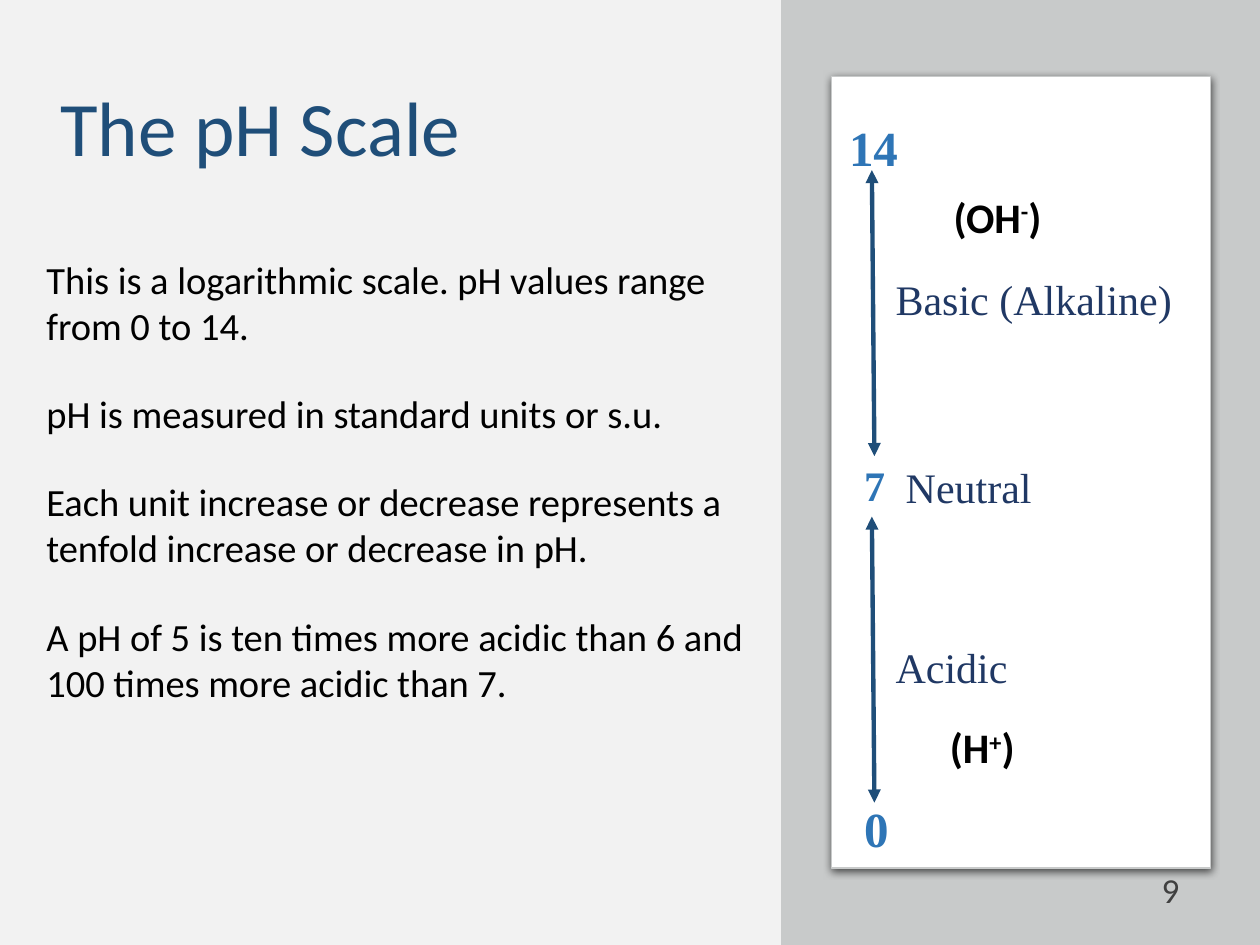
import pptx
import pptx.dml.color
import pptx.enum.shapes
import pptx.enum.text
import pptx.oxml
import pptx.oxml.ns
import pptx.util

SHAPE = pptx.enum.shapes.MSO_SHAPE
ANCHOR = pptx.enum.text.MSO_ANCHOR
ALIGN = pptx.enum.text.PP_ALIGN
NAMESPACE = pptx.oxml.ns.nsdecls("a")

deck = pptx.Presentation()
deck.slide_width = pptx.util.Inches(10)
deck.slide_height = pptx.util.Inches(7.5)
column = deck.slide_width // 100
row = deck.slide_height // 75


def colour(code):
    return pptx.dml.color.RGBColor.from_string(code)


def write(box, text, place, size=24, font="Calibri", ink="000000", bold=False,
          raised="", anchor=ANCHOR.TOP, align=ALIGN.LEFT, gap=0, spacing=1.0):
    """Put text in box at place (columns and rows); the part in raised is superscript."""
    left, top, width, height = place
    box.left, box.top = int(left * column), int(top * row)
    box.width, box.height = int(width * column), int(height * row)
    frame = box.text_frame
    frame.word_wrap = True
    frame.auto_size = pptx.enum.text.MSO_AUTO_SIZE.NONE
    frame.vertical_anchor = anchor
    for number, line in enumerate(text.split("\n")):
        para = frame.add_paragraph() if number else frame.paragraphs[0]
        para.alignment = align
        para.line_spacing = spacing
        para.space_before = pptx.util.Pt(gap if number else 0)
        for part in line.partition(raised) if raised else [line]:
            span = para.add_run()
            span.text = part
            span.font.size = pptx.util.Pt(size)
            span.font.name = font
            span.font.bold = bold
            span.font.color.rgb = colour(ink)
            if raised and part == raised:
                span.font._element.set("baseline", "30000")


page = deck.slides.add_slide(deck.slide_layouts[5])
page.background.fill.solid()
page.background.fill.fore_color.rgb = colour("F2F2F2")

# Side band and the white card on it
band = page.shapes.add_shape(SHAPE.RECTANGLE, 62 * column, 0, 38 * column, 75 * row)
card = page.shapes.add_shape(SHAPE.RECTANGLE, 66 * column, int(6.1 * row),
                             int(30.1 * column), int(62.8 * row))
for panel, fill in ((band, "C8CACA"), (card, "FFFFFF")):
    panel.shadow.inherit = False
    panel.fill.solid()
    panel.fill.fore_color.rgb = colour(fill)
    panel.line.color.rgb = colour("C8CACA")
    panel.line.width = pptx.util.Pt(0.75)
band.line.fill.background()
effects = card._element.spPr.find(pptx.oxml.ns.qn("a:effectLst"))
effects.append(pptx.oxml.parse_xml(
    f'<a:outerShdw {NAMESPACE} blurRad="57150" dist="19050" dir="5400000" algn="ctr" '
    'rotWithShape="0"><a:srgbClr val="000000"><a:alpha val="63000"/></a:srgbClr>'
    '</a:outerShdw>'))

# Title, explanation and page number
write(page.shapes.title, "The pH Scale", (3.8, 5.4, 54, 10.1), size=44, ink="1F4E79",
      anchor=ANCHOR.MIDDLE, spacing=0.9)
explanation = """This is a logarithmic scale. pH values range from 0 to 14.
pH is measured in standard units or s.u.
Each unit increase or decrease represents a tenfold increase or decrease in pH.
A pH of 5 is ten times more acidic than 6 and 100 times more acidic than 7."""
write(page.shapes.add_textbox(0, 0, 0, 0), explanation, (2.7, 19.8, 57.7, 45.6),
      size=22, gap=24)
write(page.shapes.add_textbox(0, 0, 0, 0), "9", (89, 68.6, 5.6, 4), size=20,
      ink="404040", anchor=ANCHOR.MIDDLE, align=ALIGN.RIGHT)

# Double-headed arrows between the scale values
for top in (13.5, 41):
    arrow = page.shapes.add_connector(
        pptx.enum.shapes.MSO_CONNECTOR.STRAIGHT, int(69.2 * column), int(top * row),
        int(69.4 * column), int((top + 22.7) * row))
    arrow.line.color.rgb = colour("1F4E79")
    arrow.line.width = pptx.util.Pt(2.5)
    for end in ("headEnd", "tailEnd"):
        arrow.line._get_or_add_ln().append(
            pptx.oxml.parse_xml(f'<a:{end} {NAMESPACE} type="triangle"/>'))
    arrow._element.spPr.append(pptx.oxml.parse_xml(f"<a:effectLst {NAMESPACE}/>"))

value = {"font": "Times New Roman", "ink": "2E75B6", "bold": True}
zone = {"font": "Times New Roman", "ink": "203864"}
ion = {"bold": True}
scale_labels = [
    ("14", (66.4, 8.8, 8, 3.8), {**value, "size": 28}),
    ("7", (67.6, 36, 4.9, 3.8), value),
    ("0", (67.6, 62.9, 5.4, 3.8), {**value, "size": 28}),
    ("Basic (Alkaline)", (70.1, 21.2, 25.5, 5.4), zone),
    ("Neutral", (70.9, 36.1, 13.3, 5), zone),
    ("Acidic", (70.1, 50.4, 14.8, 4.4), zone),
    ("(OH-)", (74.7, 14.7, 9.2, 5.1), {**ion, "raised": "-"}),
    ("(H+)", (74.4, 56.8, 9.2, 5.1), {**ion, "raised": "+"}),
]
for text, place, style in scale_labels:
    write(page.shapes.add_textbox(0, 0, 0, 0), text, place, **style)

deck.save("out.pptx")
